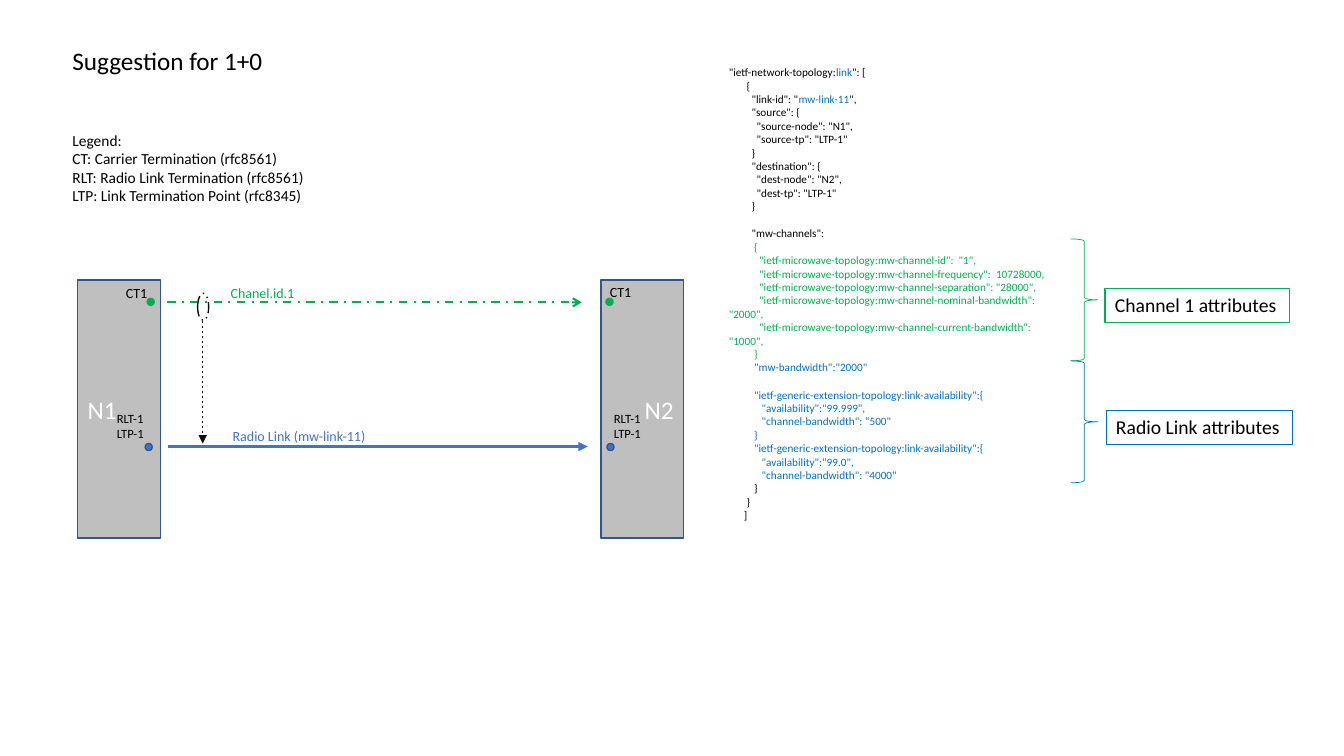
from lxml import etree
from pptx import Presentation
from pptx.dml.color import RGBColor
from pptx.enum.dml import MSO_LINE
from pptx.enum.shapes import MSO_CONNECTOR, MSO_SHAPE
from pptx.enum.text import MSO_ANCHOR, MSO_AUTO_SIZE, PP_ALIGN
from pptx.oxml.ns import qn
from pptx.util import Pt

PX = 9144  # 100 px to the inch
FONT = "Calibri"
BLACK = RGBColor(0x00, 0x00, 0x00)
NEAR_BLACK = RGBColor(0x0D, 0x0D, 0x0D)
WHITE = RGBColor(0xFF, 0xFF, 0xFF)
GREY = RGBColor(0xBF, 0xBF, 0xBF)
NAVY = RGBColor(0x32, 0x54, 0x91)
BLUE = RGBColor(0x44, 0x72, 0xC4)
LINK_BLUE = RGBColor(0x00, 0x70, 0xC0)
GREEN = RGBColor(0x00, 0xB0, 0x50)
RECTANGLE, OVAL, BRACE = MSO_SHAPE.RECTANGLE, MSO_SHAPE.OVAL, MSO_SHAPE.RIGHT_BRACE
STRAIGHT = MSO_CONNECTOR.STRAIGHT
DASH, DASH_DOT, DASH_DOT_DOT = MSO_LINE.DASH, MSO_LINE.DASH_DOT, MSO_LINE.DASH_DOT_DOT
LEFT, RIGHT = PP_ALIGN.LEFT, PP_ALIGN.RIGHT
TOP, MIDDLE = MSO_ANCHOR.TOP, MSO_ANCHOR.MIDDLE
FIT_SHAPE, FIXED_SIZE = MSO_AUTO_SIZE.SHAPE_TO_FIT_TEXT, MSO_AUTO_SIZE.NONE

presentation = Presentation()
presentation.slide_width, presentation.slide_height = 1333 * PX, 750 * PX
slide = presentation.slides.add_slide(presentation.slide_layouts[6])


def add_outlined(kind, box, line_color, width, fill=None):
    """Add a preset shape without shadow; no fill colour means transparent."""
    shape = slide.shapes.add_shape(kind, *(value * PX for value in box))
    shape.shadow.inherit = False
    if fill is None:
        shape.fill.background()
    else:
        shape.fill.solid()
        shape.fill.fore_color.rgb = fill
    shape.line.color.rgb = line_color
    shape.line.width = Pt(width)
    return shape


def write_lines(shape, text, size, color=BLACK, align=LEFT):
    """Write unwrapped text, one paragraph a line, in a shape that fits it."""
    frame = shape.text_frame
    frame.word_wrap = False
    frame.auto_size = FIT_SHAPE
    frame.vertical_anchor = TOP
    frame.text = text
    for paragraph in frame.paragraphs:
        paragraph.alignment = align
        paragraph.font.name, paragraph.font.size = FONT, Pt(size)
        paragraph.font.color.rgb = color


# Nodes
for name, left, align in (("N1", 77, LEFT), ("N2", 596, RIGHT)):
    node = add_outlined(RECTANGLE, (left, 278, 82, 256), NAVY, 1, GREY)
    write_lines(node, name, 18, WHITE, align)
    node.text_frame.auto_size = FIXED_SIZE
    node.text_frame.word_wrap = True
    node.text_frame.vertical_anchor = MIDDLE

# Channel, radio link and the arrow from one to the other
for start_x, start_y, end_x, end_y, color, width, dash, head in (
    (166, 300, 577, 300, GREEN, 1.5, DASH_DOT, "arrow"),
    (167, 443, 583, 443, BLUE, 2.25, None, "triangle"),
    (201, 318, 201, 440, NEAR_BLACK, 0.5, DASH, "triangle"),
):
    connector = slide.shapes.add_connector(
        STRAIGHT, start_x * PX, start_y * PX, end_x * PX, end_y * PX)
    connector.line.color.rgb = color
    connector.line.width = Pt(width)
    if dash is not None:
        connector.line.dash_style = dash
    properties = connector._element.spPr
    etree.SubElement(properties.find(qn("a:ln")), qn("a:tailEnd"), type=head)
    etree.SubElement(properties, qn("a:effectLst"))

channel_ring = add_outlined(OVAL, (196, 291, 11, 27), NEAR_BLACK, 1)
channel_ring.line.dash_style = DASH_DOT_DOT

# Termination points
for left, top, line_color, fill in (
    (144, 440, NAVY, BLUE), (602, 440, NAVY, BLUE),
    (146, 296, GREEN, GREEN), (601, 296, GREEN, GREEN),
):
    add_outlined(OVAL, (left, top, 7, 7), line_color, 1, fill)

# Labels
TERMINATIONS = "RLT-1\nLTP-1"
LEGEND = """Legend:
CT: Carrier Termination (rfc8561)
RLT: Radio Link Termination (rfc8561)
LTP: Link Termination Point (rfc8345)"""
for box, text, size, color in (
    ((62, 40, 211, 40), "Suggestion for 1+0", 18, BLACK),
    ((62, 125, 256, 84), LEGEND, 11, BLACK),
    ((219, 277, 84, 27), "Chanel.id.1", 10, GREEN),
    ((221, 419, 154, 27), "Radio Link (mw-link-11)", 10, BLUE),
    ((115, 277, 42, 27), "CT1", 10, BLACK),
    ((595, 276, 42, 27), "CT1", 10, BLACK),
    ((106, 403, 48, 40), TERMINATIONS, 9, BLACK),
    ((599, 403, 48, 40), TERMINATIONS, 9, BLACK),
):
    label = slide.shapes.add_textbox(*(value * PX for value in box))
    write_lines(label, text, size, color)

# Topology listing: bars enclose highlighted words, an empty line becomes a gap
LISTING = (
    (BLACK, '''"ietf-network-topology:|link|": [
       {
         "link-id": "|mw-link-11|",
         "source": {
           "source-node": "N1",
           "source-tp": "LTP-1"
         }
         "destination": {
           "dest-node": "N2",
           "dest-tp": "LTP-1"
         }

         "mw-channels":'''),
    (GREEN, '''          {
            "ietf-microwave-topology:mw-channel-id":  "1",
            "ietf-microwave-topology:mw-channel-frequency":  10728000,
            "ietf-microwave-topology:mw-channel-separation": "28000",
            "ietf-microwave-topology:mw-channel-nominal-bandwidth": "2000",
            "ietf-microwave-topology:mw-channel-current-bandwidth": "1000",
          }'''),
    (LINK_BLUE, '''          "mw-bandwidth":"2000"

          "ietf-generic-extension-topology:link-availability":{
             "availability":"99.999",
             "channel-bandwidth": “500"
          }
          "ietf-generic-extension-topology:link-availability":{
             "availability":"99.0",
             "channel-bandwidth": "4000"'''),
    (BLACK, '''          }
       }
      ]'''),
)
LINE_HEIGHT = Pt(9.75)
listing = slide.shapes.add_textbox(713 * PX, 60 * PX, 349 * PX, 481 * PX)
listing.text_frame.word_wrap = True
listing.text_frame.auto_size = FIT_SHAPE
paragraph = listing.text_frame.paragraphs[0]
gap = False
for color, block in LISTING:
    for line in block.split("\n"):
        if not line:
            gap = True
            continue
        if paragraph.runs:
            paragraph = listing.text_frame.add_paragraph()
        if gap:
            paragraph.space_before = LINE_HEIGHT
            gap = False
        paragraph.font.name, paragraph.font.size = FONT, Pt(8)
        for index, part in enumerate(line.split("|")):
            run = paragraph.add_run()
            run.text = part
            run.font.color.rgb = LINK_BLUE if index % 2 else color

# Braces and what they hold
for brace_top, box, text, color in (
    (237, (1096, 286, 183, 34), "Channel 1 attributes", GREEN),
    (358, (1097, 407, 185, 34), "Radio Link attributes", LINK_BLUE),
):
    add_outlined(BRACE, (1062, brace_top, 27, 121), color, 0.5)
    write_lines(add_outlined(RECTANGLE, box, color, 0.75), text, 14)

presentation.save("out.pptx")
